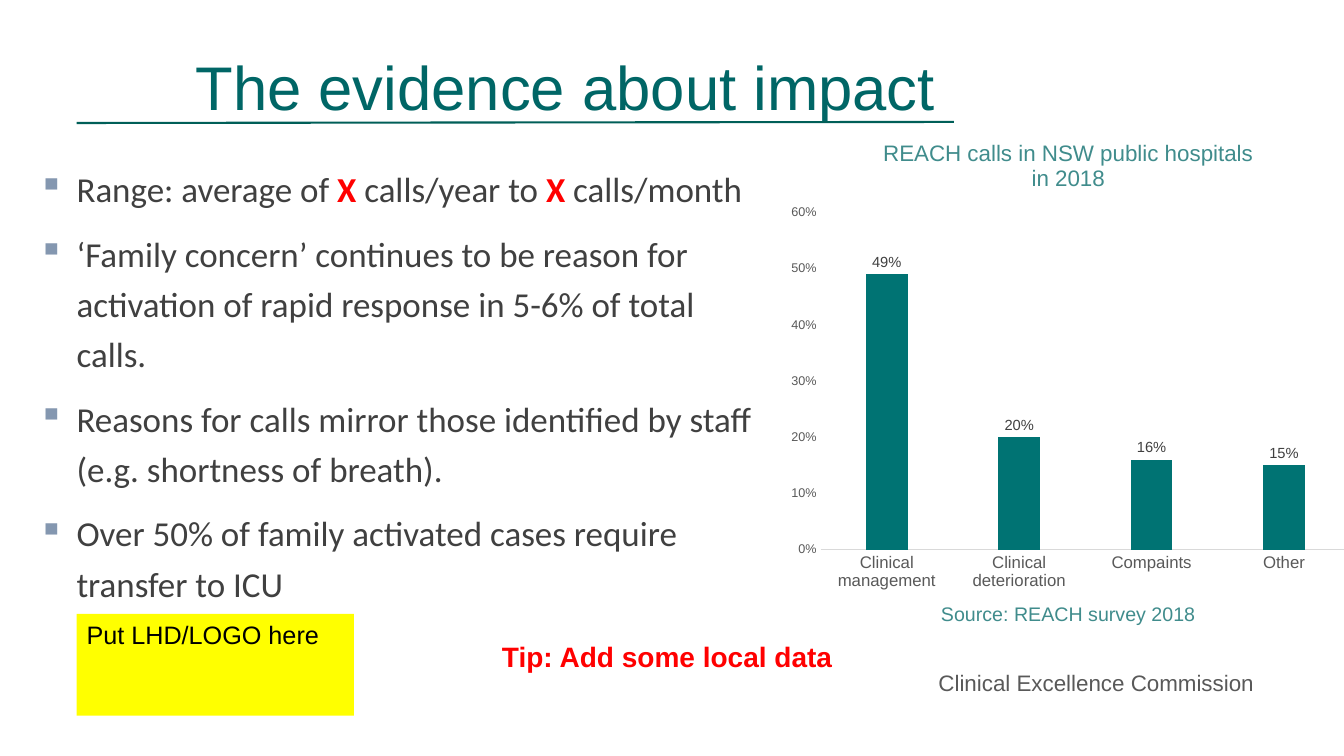
import pptx
import pptx.util
import pptx.chart.data
import pptx.dml.color
import pptx.enum.chart
import pptx.enum.shapes
import pptx.enum.text
import pptx.oxml
import pptx.oxml.ns
import lxml.etree

Pt = pptx.util.Pt
Align = pptx.enum.text.PP_ALIGN
Anchor = pptx.enum.text.MSO_ANCHOR
theme = {
    "sans": "Arial", "body": "Calibri",
    "title": 44, "text": 25, "tip": 20, "logo": 18, "head": 16,
    "note": 14, "cat": 12, "label": 10.5, "tick": 9,
    "deep": "006666", "rule": "005F58", "bar": "007373", "soft": "408C8C",
    "dark": "404040", "grey": "595959", "pale": "D9D9D9", "mark": "8497B0",
    "red": "FF0000", "yellow": "FFFF00", "black": "000000",
}

deck = pptx.Presentation()
deck.slide_width = pptx.util.Inches(13.33)
deck.slide_height = pptx.util.Inches(7.5)
slide = deck.slides.add_slide(deck.slide_layouts[6])
shapes = slide.shapes


def place(*shares):
    sides = (deck.slide_width, deck.slide_height) * 2
    return [int(side * share / 100) for side, share in zip(sides, shares)]


def style(font, size, color, face="sans", bold=False):
    font.size = Pt(theme[size])
    font.name = theme[face]
    font.bold = bold
    font.color.rgb = pptx.dml.color.RGBColor.from_string(theme[color])


logo = shapes.add_shape(pptx.enum.shapes.MSO_SHAPE.RECTANGLE,
                        *place(5.7, 81.2, 20.63, 13.47))
logo.shadow.inherit = False
logo.fill.solid()
logo.fill.fore_color.rgb = pptx.dml.color.RGBColor.from_string(theme["yellow"])
logo.line.fill.background()
logo.text_frame.vertical_anchor = Anchor.TOP
logo.text_frame.text = "Put LHD/LOGO here"
logo.text_frame.paragraphs[0].alignment = Align.LEFT
style(logo.text_frame.paragraphs[0].font, "logo", "black")

labels = [
    ("The evidence about impact", (14.55, 7.07, 78.5, 9.73),
     "title", "deep", Align.LEFT, Anchor.MIDDLE, True, False),
    ("REACH calls in NSW public hospitals in 2018", (65.34, 18.93, 28.28, 6.27),
     "head", "soft", Align.CENTER, Anchor.MIDDLE, True, False),
    ("Source: REACH survey 2018", (65.34, 80, 28.28, 6.27),
     "note", "soft", Align.CENTER, Anchor.TOP, True, False),
    ("Clinical Excellence Commission", (69.09, 87.87, 25.2, 5.33),
     "head", "grey", Align.LEFT, Anchor.TOP, False, False),
    ("Tip: Add some local data", (36.61, 84, 44.64, 5.87),
     "tip", "red", Align.LEFT, Anchor.TOP, False, True),
]
for words, spot, size, color, align, anchor, tight, bold in labels:
    frame = shapes.add_textbox(*place(*spot)).text_frame
    frame.word_wrap = True
    frame.vertical_anchor = anchor
    frame.text = words
    para = frame.paragraphs[0]
    para.alignment = align
    if tight:
        frame.margin_left = frame.margin_right = 0
        frame.margin_top = frame.margin_bottom = 0
        para.line_spacing = 0.9
    style(para.font, size, color, bold=bold)

points = [
    ["Range: average of ", "X", " calls/year to ", "X", " calls/month"],
    ["‘Family concern’ continues to be reason for activation of rapid "
     "response in 5-6% of total calls."],
    ["Reasons for calls mirror those identified by staff "
     "(e.g. shortness of breath)."],
    ["Over 50% of family activated cases require transfer to ICU"],
]
frame = shapes.add_textbox(*place(2.85, 21.07, 53.79, 58.13)).text_frame
frame.word_wrap = True
frame.margin_left = frame.margin_right = 0
frame.margin_top = frame.margin_bottom = 0
indent = place(2.85)[0]
for rank, parts in enumerate(points):
    para = frame.add_paragraph() if rank else frame.paragraphs[0]
    para.line_spacing = 1.2
    if rank:
        para.space_before = Pt(10)
    props = para._p.get_or_add_pPr()
    props.set("marL", str(indent))
    props.set("indent", str(-indent))
    tint = lxml.etree.SubElement(props, pptx.oxml.ns.qn("a:buClr"))
    lxml.etree.SubElement(tint, pptx.oxml.ns.qn("a:srgbClr"), val=theme["mark"])
    lxml.etree.SubElement(props, pptx.oxml.ns.qn("a:buChar"), char="▪")
    if len(parts) == 1:
        style(para.font, "text", "dark", "body")
    for part in parts:
        run = para.add_run()
        run.text = part
        if len(parts) > 1:
            key = part == "X"
            style(run.font, "text", "red" if key else "dark", "body", key)

data = pptx.chart.data.CategoryChartData(number_format="0%")
data.categories = ["Clinical management", "Clinical deterioration",
                   "Compaints", "Other"]
data.add_series("Series 1", [0.49, 0.2, 0.16, 0.15])
chart = shapes.add_chart(pptx.enum.chart.XL_CHART_TYPE.COLUMN_CLUSTERED,
                         *place(58.06, 26, 42.84, 53.07), data).chart
chart.has_title = False
chart.has_legend = False
style(chart.font, "tick", "black")

plot = chart.plots[0]
plot.gap_width = 219
plot.overlap = -27
plot.vary_by_categories = False
fill = plot.series[0].format.fill
fill.solid()
fill.fore_color.rgb = pptx.dml.color.RGBColor.from_string(theme["bar"])
plot.has_data_labels = True
plot.data_labels.show_value = True
plot.data_labels.number_format = "0%"
plot.data_labels.number_format_is_linked = False
plot.data_labels.position = pptx.enum.chart.XL_LABEL_POSITION.OUTSIDE_END
style(plot.data_labels.font, "label", "dark")

for axis, size in ((chart.category_axis, "cat"), (chart.value_axis, "tick")):
    axis.has_major_gridlines = False
    axis.major_tick_mark = pptx.enum.chart.XL_TICK_MARK.NONE
    axis.minor_tick_mark = pptx.enum.chart.XL_TICK_MARK.NONE
    style(axis.tick_labels.font, size, "grey")
base = chart.category_axis.format.line
base.width = Pt(0.75)
base.color.rgb = pptx.dml.color.RGBColor.from_string(theme["pale"])
scale = chart.value_axis
scale.format.line.fill.background()
scale.minimum_scale, scale.maximum_scale, scale.major_unit = 0, 0.6, 0.1
scale.tick_labels.number_format = "0%"
scale.tick_labels.number_format_is_linked = False

area = chart._chartSpace.chart.plotArea
for old in area.findall(pptx.oxml.ns.qn("c:layout")):
    area.remove(old)
frame = lxml.etree.Element(pptx.oxml.ns.qn("c:layout"))
area.insert(0, frame)
manual = lxml.etree.SubElement(frame, pptx.oxml.ns.qn("c:manualLayout"))
for tag, val in (("layoutTarget", "inner"), ("xMode", "edge"), ("yMode", "edge"),
                 ("x", "0.07"), ("y", "0.04"), ("w", "0.92"), ("h", "0.84")):
    lxml.etree.SubElement(manual, pptx.oxml.ns.qn("c:" + tag), val=val)

rule = shapes.add_connector(pptx.enum.shapes.MSO_CONNECTOR.STRAIGHT,
                            *place(5.7, 16.27, 70.97, 16.13))
rule.line.width = Pt(1.5)
rule.line.color.rgb = pptx.dml.color.RGBColor.from_string(theme["rule"])
lxml.etree.SubElement(rule._element.spPr, pptx.oxml.ns.qn("a:effectLst"))

deck.save("out.pptx")
